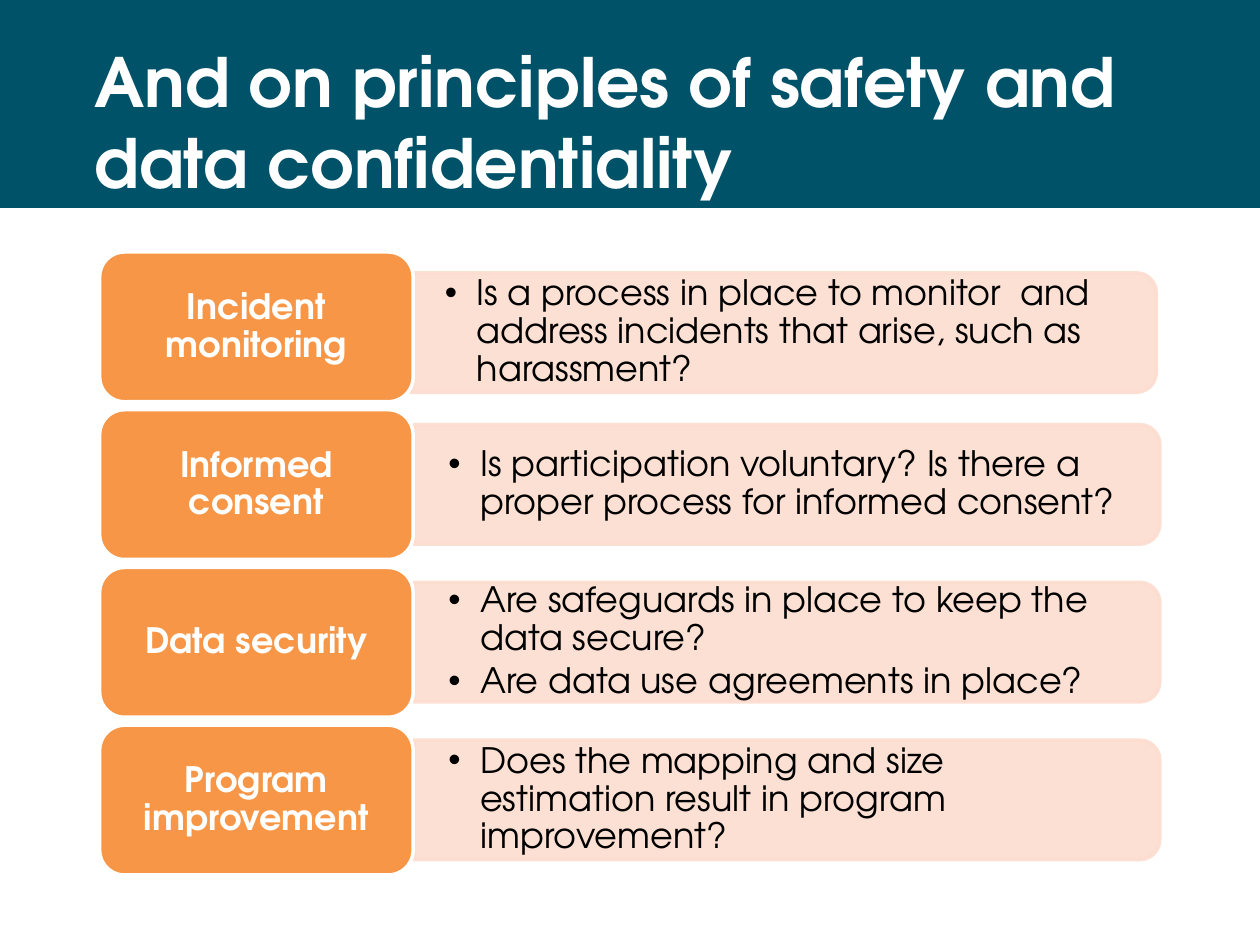
from dataclasses import dataclass

from lxml import etree
from pptx import Presentation
from pptx import util as u
from pptx.dml.color import RGBColor
from pptx.enum import shapes, text
from pptx.oxml.ns import qn

FONT = "TeX Gyre Adventor"
COLORS = {"band": "005268", "label": "F79646", "bar": "FCDDCF",
          "white": "FFFFFF", "black": "000000"}

# Row grid, in centimetres
LABEL_LEFT, LABEL_TOP, LABEL_W, LABEL_H = 2.01, 5.08, 6.32, 3.02
ROW_PITCH = 3.18
BAR_LEFT, BAR_W, BAR_H = 8.34, 15.04, 2.41


@dataclass
class Row:
    label: str
    questions: list[str]
    bar_dx: float = 0.0
    bar_dy: float = 0.3  # from the top of the label to the top of the bar


ROWS = [
    Row("Incident monitoring",
        ["Is a process in place to monitor  and address incidents that arise, such as harassment?"],
        bar_dx=-0.07, bar_dy=0.42),
    Row("Informed consent",
        ["Is participation voluntary? Is there a proper process for informed consent?"]),
    Row("Data security",
        ["Are safeguards in place to keep the data secure?",
         "Are data use agreements in place?"]),
    Row("Program improvement",
        ["Does the mapping and size estimation result in program improvement?"]),
]


def rgb(name: str) -> RGBColor:
    return RGBColor.from_string(COLORS[name])


def place(sp, left: float, top: float, width: float, height: float) -> None:
    sp.left, sp.top, sp.width, sp.height = map(u.Cm, (left, top, width, height))


def add_box(slide, kind, box: tuple, fill: str, line: str | None = None):
    sp = slide.shapes.add_shape(kind, *map(u.Cm, box))
    sp.shadow.inherit = False
    sp.fill.solid()
    sp.fill.fore_color.rgb = rgb(fill)
    if line:
        sp.line.color.rgb = rgb(line)
        sp.line.width = u.Pt(2)
    else:
        sp.line.fill.background()
    return sp


def write(sp, lines: list[str], *, size=20, color="white", bold=False,
          align=text.PP_ALIGN.LEFT, anchor=text.MSO_ANCHOR.MIDDLE,
          margins=(0.25, 0.13), spacing=0.9, after=0, bullet=False) -> None:
    tf = sp.text_frame
    tf.word_wrap = True
    tf.auto_size = text.MSO_AUTO_SIZE.NONE
    tf.vertical_anchor = anchor
    tf.margin_left = tf.margin_right = u.Cm(margins[0])
    tf.margin_top = tf.margin_bottom = u.Cm(margins[1])
    for i, line in enumerate(lines):
        p = tf.add_paragraph() if i else tf.paragraphs[0]
        p.alignment, p.line_spacing = align, spacing
        p.space_before, p.space_after = u.Pt(0), u.Pt(after)
        r = p.add_run()
        r.text = line
        r.font.name, r.font.size, r.font.bold = FONT, u.Pt(size), bold
        r.font.color.rgb = rgb(color)
        if bullet:
            pPr = p._p.get_or_add_pPr()
            pPr.set("marL", str(u.Cm(0.64)))
            pPr.set("indent", str(-u.Cm(0.64)))
            etree.SubElement(pPr, qn("a:buFont")).set("typeface", "Arial")
            etree.SubElement(pPr, qn("a:buChar")).set("char", "•")


def bring_to_front(slide, sp) -> None:
    slide.shapes._spTree.append(sp._element)


def add_bar(slide, left: float, top: float) -> None:
    # A tall shape turned by 90 degrees around its centre
    shift = (BAR_W - BAR_H) / 2
    sp = add_box(slide, shapes.MSO_SHAPE.ROUND_2_SAME_RECTANGLE,
                 (left + shift, top - shift, BAR_H, BAR_W), "bar", "bar")
    sp.rotation = 90
    for clr in sp._element.spPr.iter(qn("a:srgbClr")):
        etree.SubElement(clr, qn("a:alpha")).set("val", "90000")


def add_row(slide, row: Row, top: float, body) -> None:
    left, bar_top = BAR_LEFT + row.bar_dx, top + row.bar_dy
    add_bar(slide, left, bar_top)

    # Questions
    place(body, left + 0.01, bar_top + 0.11, 14.91, 2.18)
    write(body, row.questions, color="black", margins=(0.69, 0.36),
          after=3, bullet=True)
    bring_to_front(slide, body)

    # Label
    sp = add_box(slide, shapes.MSO_SHAPE.ROUNDED_RECTANGLE,
                 (LABEL_LEFT, top, LABEL_W, LABEL_H), "label", "white")
    write(sp, [row.label], bold=True, align=text.PP_ALIGN.CENTER,
          margins=(0.36, 0.25))


def main() -> None:
    prs = Presentation()
    prs.slide_width, prs.slide_height = u.Cm(25.4), u.Cm(19.05)
    # The Comparison layout has a title and four body placeholders
    slide = prs.slides.add_slide(prs.slide_layouts[4])
    title, *bodies = slide.placeholders

    # Title on its band
    add_box(slide, shapes.MSO_SHAPE.RECTANGLE, (0, 0, 25.4, 4.19), "band")
    place(title, 1.65, 1.42, 22.1, 2.79)
    write(title, ["And on principles of safety and data confidentiality"],
          size=38.8, bold=True, anchor=text.MSO_ANCHOR.BOTTOM, spacing=1.0)
    bring_to_front(slide, title)

    # Principles
    for i, (row, body) in enumerate(zip(ROWS, bodies)):
        add_row(slide, row, LABEL_TOP + i * ROW_PITCH, body)

    prs.save("out.pptx")


if __name__ == "__main__":
    main()
